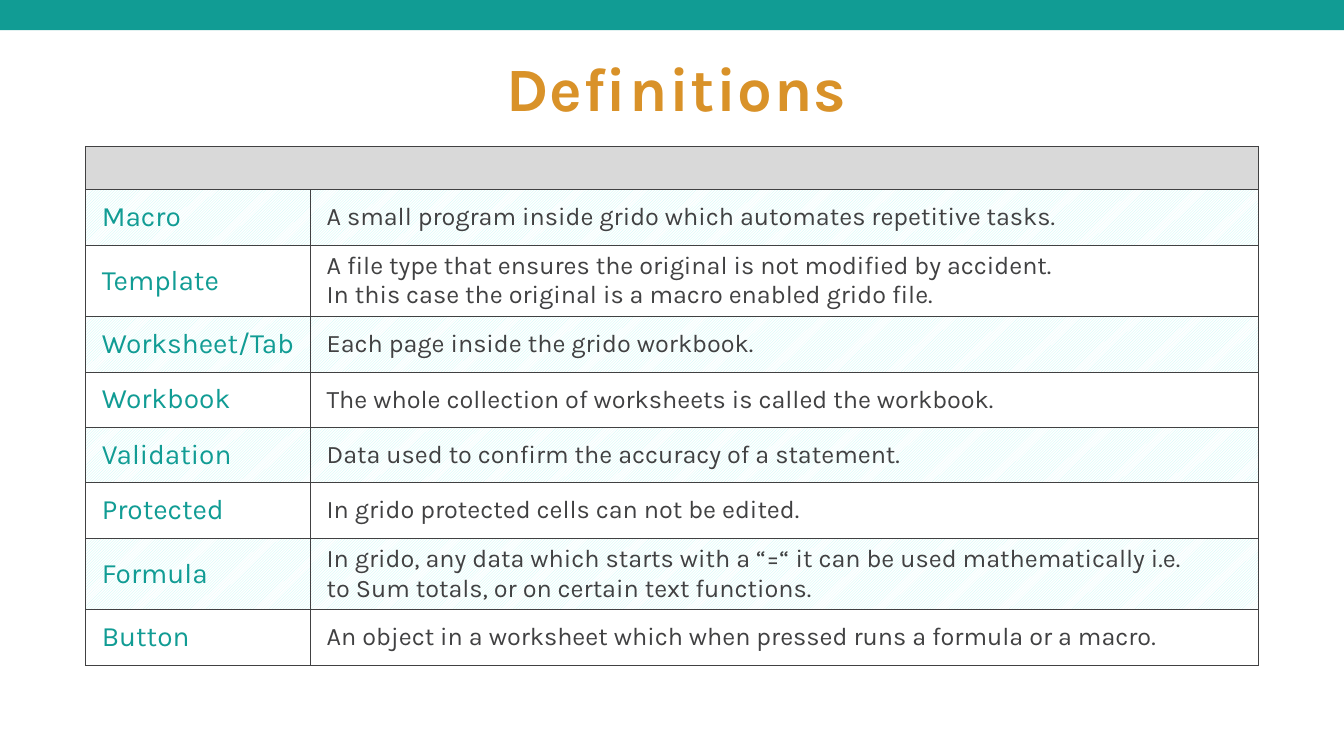
from lxml import etree
from pptx import Presentation
from pptx.dml.color import RGBColor
from pptx.enum.dml import MSO_PATTERN
from pptx.enum.shapes import MSO_SHAPE
from pptx.enum.text import MSO_ANCHOR, PP_ALIGN
from pptx.oxml.ns import qn
from pptx.util import Inches, Pt

TITLE = "Definitions"
DEFINITIONS = [
    ("Macro", "A small program inside grido which automates repetitive tasks."),
    ("Template", "A file type that ensures the original is not modified by accident. \n"
                 "In this case the original is a macro enabled grido file."),
    ("Worksheet/Tab", "Each page inside the grido workbook."),
    ("Workbook", "The whole collection of worksheets is called the workbook."),
    ("Validation", "Data used to confirm the accuracy of a statement."),
    ("Protected", "In grido protected cells can not be edited."),
    ("Formula", "In grido, any data which starts with a “=“ it can be used mathematically i.e. \n"
                "to Sum totals, or on certain text functions."),
    ("Button", "An object in a worksheet which when pressed runs a formula or a macro."),
]
COLORS = {"teal": "119C94", "gold": "D99229", "text": "414142",
          "header": "D9D9D9", "stripe": "C2F8F5", "white": "FFFFFF"}
FONT = "Karla"
COL_WIDTHS = (2.23, 9.4)
HEADER_H, ONE_LINE_H, TWO_LINE_H = 0.43, 0.55, 0.71
CELL_STYLES = ((20, "teal"), (18, "text"))
MIDDLE = MSO_ANCHOR.MIDDLE
CENTER = PP_ALIGN.CENTER
DIAGONAL = MSO_PATTERN.LIGHT_UPWARD_DIAGONAL
RECTANGLE = MSO_SHAPE.RECTANGLE


def rgb(name):
    return RGBColor.from_string(COLORS[name])


def style_font(font, size, color):
    font.name = FONT
    font.size = Pt(size)
    font.color.rgb = rgb(color)


def fill_solid(fill, color):
    fill.solid()
    fill.fore_color.rgb = rgb(color)


def fill_striped(fill):
    fill.patterned()
    fill.pattern = DIAGONAL
    fill.fore_color.rgb = rgb("stripe")
    fill.back_color.rgb = rgb("white")


def add_borders(cell):
    tcPr = cell._tc.get_or_add_tcPr()
    for i, side in enumerate(("a:lnL", "a:lnR", "a:lnT", "a:lnB")):
        ln = etree.Element(qn(side), w=str(Pt(0.5)))
        solid = etree.SubElement(ln, qn("a:solidFill"))
        etree.SubElement(solid, qn("a:srgbClr"), val=COLORS["text"])
        tcPr.insert(i, ln)


def add_band(s):
    band = s.shapes.add_shape(RECTANGLE, Inches(0), Inches(-0.07), Inches(13.5), Inches(0.37))
    band.shadow.inherit = False
    fill_solid(band.fill, "teal")
    band.line.fill.background()


def add_title(s):
    title = s.shapes.title
    title.left, title.top = Inches(0.96), Inches(0.55)
    title.width, title.height = Inches(11.5), Inches(0.77)
    tf = title.text_frame
    tf.text = TITLE
    tf.vertical_anchor = MIDDLE
    p = tf.paragraphs[0]
    p.alignment = CENTER
    p.line_spacing = 0.8
    r = p.runs[0]
    style_font(r.font, 44, "gold")
    r.font.bold = True
    r._r.get_or_add_rPr().set("spc", "100")


def add_definitions(s):
    heights = [HEADER_H] + [TWO_LINE_H if "\n" in text else ONE_LINE_H
                            for _, text in DEFINITIONS]
    table = s.shapes.add_table(len(heights), len(COL_WIDTHS), Inches(0.85), Inches(1.45),
                               Inches(sum(COL_WIDTHS)), Inches(sum(heights))).table
    for column, width in zip(table.columns, COL_WIDTHS):
        column.width = Inches(width)
    for row, height in zip(table.rows, heights):
        row.height = Inches(height)

    for cell in table.rows[0].cells:
        fill_solid(cell.fill, "header")
    table.cell(0, 0).merge(table.cell(0, 1))

    for i, entry in enumerate(DEFINITIONS, start=1):
        for j, (text, (size, color)) in enumerate(zip(entry, CELL_STYLES)):
            cell = table.cell(i, j)
            cell.vertical_anchor = MIDDLE
            cell.margin_left = Inches(0.16)
            cell.margin_right = Inches(0 if j else 0.1)
            p = cell.text_frame.paragraphs[0]
            p.text = text
            for r in p.runs:
                style_font(r.font, size, color)
            if i % 2:
                fill_striped(cell.fill)
            else:
                fill_solid(cell.fill, "white")

    for cell in table.iter_cells():
        add_borders(cell)


def main():
    prs = Presentation()
    prs.slide_width, prs.slide_height = Inches(13.33), Inches(7.5)
    s = prs.slides.add_slide(prs.slide_layouts[5])
    add_band(s)
    add_title(s)
    add_definitions(s)
    prs.save("out.pptx")


if __name__ == "__main__":
    main()
